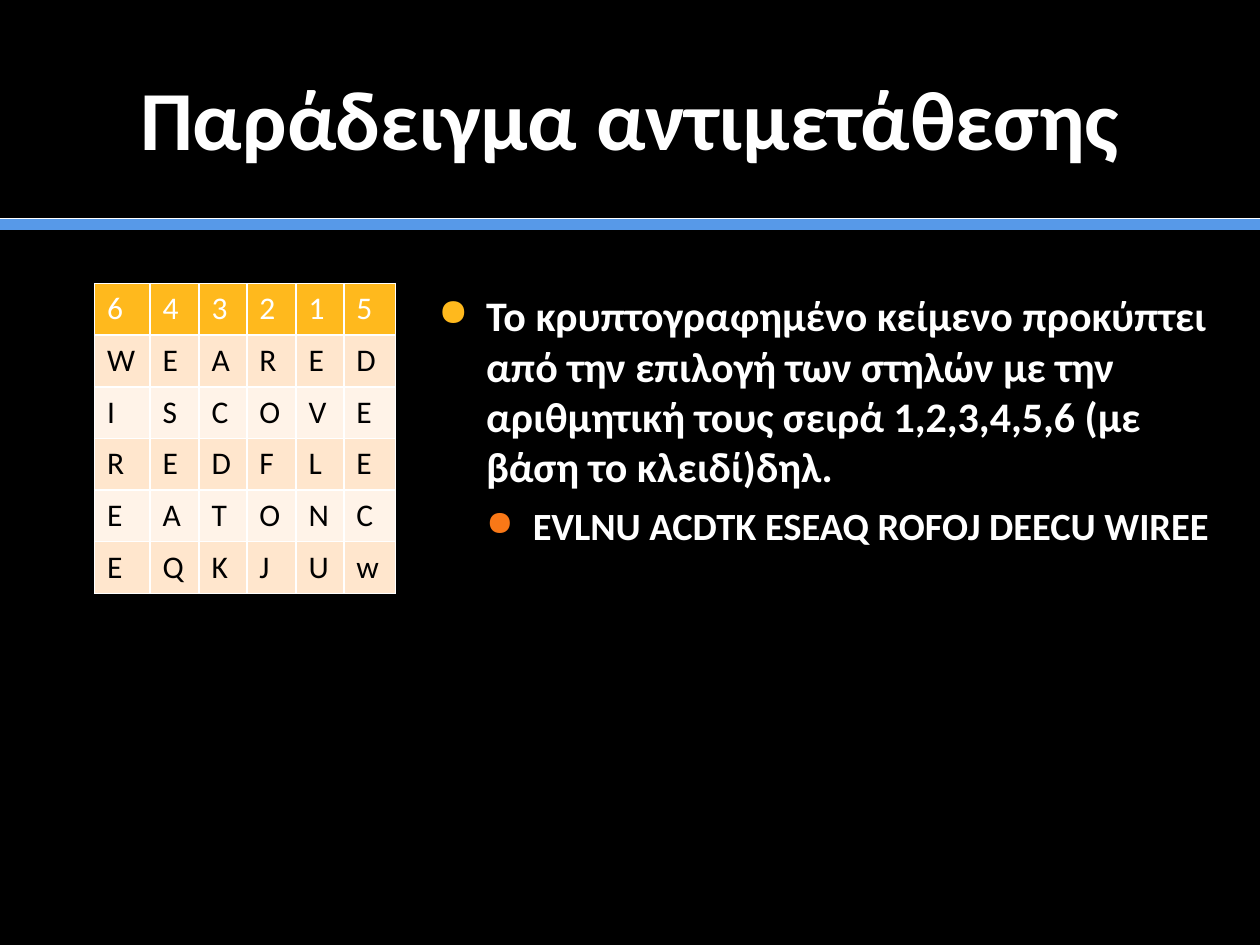
from lxml.etree import SubElement
from pptx import Presentation
from pptx.dml.color import RGBColor
from pptx.enum.shapes import MSO_CONNECTOR
from pptx.enum.text import MSO_ANCHOR, PP_ALIGN
from pptx.oxml.ns import qn
from pptx.util import Inches, Pt

# Content
TITLE = "Παράδειγμα αντιμετάθεσης"
KEY_GRID = ["643215", "WEARED", "ISCOVE", "REDFLE", "EATONC", "EQKJUw"]
# text, size, left margin, hanging indent, space before, bullet colour
POINTS = [
    ("Το κρυπτογραφημένο κείμενο προκύπτει από την επιλογή των στηλών με την "
     "αριθμητική τους σειρά 1,2,3,4,5,6 (με βάση το κλειδί)δηλ.",
     24, 0.38, 0.38, 0, "FFB91D"),
    ("EVLNU ACDTK ESEAQ ROFOJ DEECU WIREE", 22, 0.75, 0.37, 6, "F97817"),
]
RULES = [(1.78, "5799E8", 7), (1.73, "FFFFFF", 0.5)]  # top, colour, width
COLUMN_WIDTHS = [0.44, 0.39, 0.38, 0.39, 0.38, 0.41]
ROW_HEIGHT = 0.41
HEADER_FILL, BAND_FILLS = "FFB91D", ("FFF3E8", "FFE6CD")
WHITE, BLACK = "FFFFFF", "000000"


def color(value):
    return RGBColor.from_string(value)


def set_font(para, size, value, bold=False):
    font = para.font
    font.name, font.size, font.bold = "Calibri", Pt(size), bold
    font.color.rgb = color(value)


def add_box(page, left, top, width, height):
    box = page.shapes.add_textbox(*map(Inches, (left, top, width, height)))
    box.text_frame.word_wrap = True
    return box.text_frame


def add_bullet(para, left, hanging, value):
    props = para._p.get_or_add_pPr()
    props.set("marL", str(Inches(left)))
    props.set("indent", str(-Inches(hanging)))
    fill = SubElement(props, qn("a:buClr"))
    SubElement(fill, qn("a:srgbClr"), val=value)
    SubElement(props, qn("a:buSzPct"), val="90000")
    SubElement(props, qn("a:buChar"), char="●")


def add_borders(cell, value, width):
    props = cell._tc.get_or_add_tcPr()
    for index, side in enumerate(("lnL", "lnR", "lnT", "lnB")):
        line = props.makeelement(qn(f"a:{side}"), {"w": str(Pt(width))})
        fill = SubElement(line, qn("a:solidFill"))
        SubElement(fill, qn("a:srgbClr"), val=value)
        props.insert(index, line)


deck = Presentation()
deck.slide_width, deck.slide_height = Inches(10), Inches(7.5)
page = deck.slides.add_slide(deck.slide_layouts[6])
page.background.fill.solid()
page.background.fill.fore_color.rgb = color(BLACK)

# Rules under the title
for top, value, width in RULES:
    rule = page.shapes.add_connector(
        MSO_CONNECTOR.STRAIGHT, 0, Inches(top), deck.slide_width, Inches(top))
    rule.line.color.rgb = color(value)
    rule.line.width = Pt(width)
    SubElement(rule._element.spPr, qn("a:effectLst"))

# Title
frame = add_box(page, 0.5, 0.3, 9, 1.25)
frame.vertical_anchor = MSO_ANCHOR.MIDDLE
para = frame.paragraphs[0]
para.text, para.alignment = TITLE, PP_ALIGN.CENTER
set_font(para, 48, WHITE, bold=True)

# Transposition table
table = page.shapes.add_table(
    len(KEY_GRID), len(COLUMN_WIDTHS), Inches(0.75), Inches(2.25),
    Inches(sum(COLUMN_WIDTHS)), Inches(ROW_HEIGHT * len(KEY_GRID))).table
for column, width in zip(table.columns, COLUMN_WIDTHS):
    column.width = Inches(width)
for row, letters in enumerate(KEY_GRID):
    for col, letter in enumerate(letters):
        cell = table.cell(row, col)
        cell.text = letter
        cell.fill.solid()
        cell.fill.fore_color.rgb = color(BAND_FILLS[row % 2] if row else HEADER_FILL)
        set_font(cell.text_frame.paragraphs[0], 18, BLACK if row else WHITE)
        add_borders(cell, WHITE, 1)

# Explanation
frame = add_box(page, 3.38, 2.25, 6.38, 4.33)
for index, (text, size, left, hanging, before, value) in enumerate(POINTS):
    para = frame.add_paragraph() if index else frame.paragraphs[0]
    para.text, para.level = text, index
    if before:
        para.space_before = Pt(before)
    add_bullet(para, left, hanging, value)
    set_font(para, size, WHITE, bold=True)

deck.save("out.pptx")
